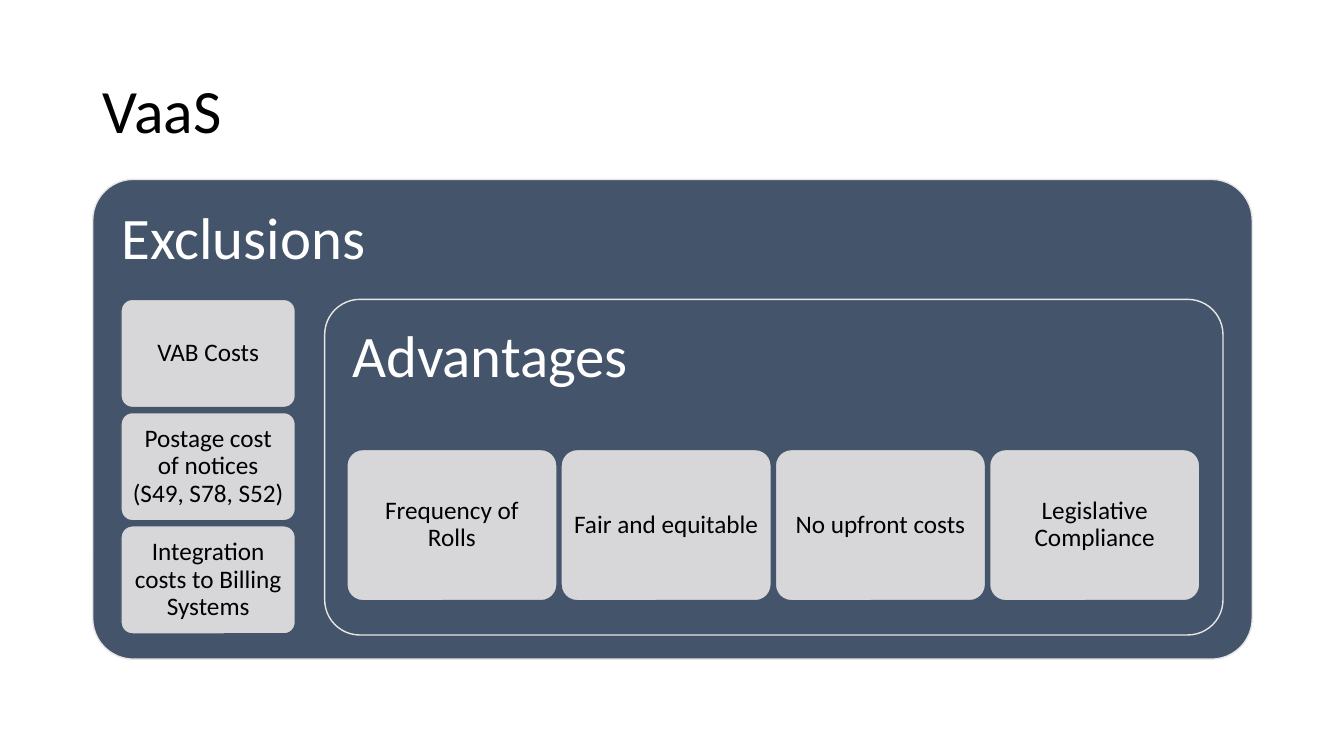
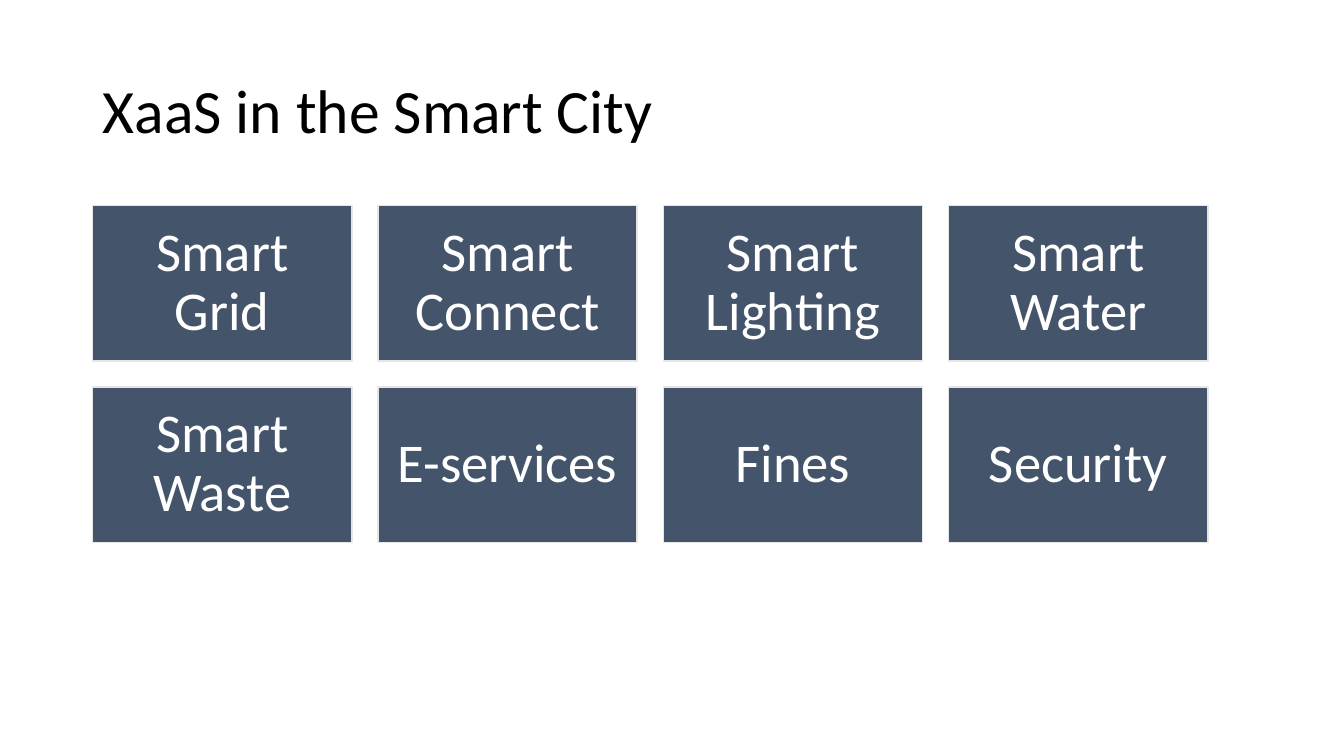
from lxml.etree import SubElement
from pptx import Presentation
from pptx.dml.color import RGBColor
from pptx.enum.shapes import MSO_SHAPE
from pptx.enum.text import MSO_ANCHOR, PP_ALIGN
from pptx.oxml.ns import qn
from pptx.util import Inches, Pt

FONT = "Calibri"
NAVY, PALE, WHITE, BLACK = "44546A", "E7E6E6", "FFFFFF", "000000"
LEFT, WIDTH = 0.92, 11.5


def rgb(value):
    return RGBColor.from_string(value)


def write(sp, text, size, color, margin, align, anchor):
    tf = sp.text_frame
    tf.word_wrap = True
    tf.vertical_anchor = anchor
    tf.margin_left = tf.margin_right = Inches(margin[0])
    tf.margin_top = tf.margin_bottom = Inches(margin[1])
    p = tf.paragraphs[0]
    p.text = text
    p.alignment = align
    p.line_spacing = 0.9
    p.font.name, p.font.size = FONT, Pt(size)
    p.font.color.rgb = rgb(color)


def add_title_slide(prs, title):
    slide = prs.slides.add_slide(prs.slide_layouts[6])
    sp = slide.shapes.add_textbox(*map(Inches, (LEFT, 0.4, WIDTH, 1.45)))
    write(sp, title, 44, BLACK, (0.1, 0.05), PP_ALIGN.LEFT, MSO_ANCHOR.MIDDLE)
    return slide


def add_box(slide, area, fill, line, corner=None, alpha=None):
    kind = MSO_SHAPE.RECTANGLE if corner is None else MSO_SHAPE.ROUNDED_RECTANGLE
    sp = slide.shapes.add_shape(kind, *map(Inches, area))
    sp.shadow.inherit = False
    if corner is not None:
        sp.adjustments[0] = corner
    sp.fill.solid()
    sp.fill.fore_color.rgb = rgb(fill)
    sp.line.color.rgb = rgb(line)
    sp.line.width = Pt(1)
    if alpha is not None:
        color = sp._element.spPr.find(qn("a:solidFill"))[0]
        SubElement(color, qn("a:alpha")).set("val", str(alpha * 1000))
    return sp


def add_panel(slide, area, heading, corner):
    sp = add_box(slide, area, NAVY, PALE, corner)
    write(sp, heading, 42, WHITE, (0.17, 0.17), PP_ALIGN.LEFT, MSO_ANCHOR.TOP)


def add_card(slide, area, text):
    sp = add_box(slide, area, PALE, NAVY, 0.105, 90)
    write(sp, text, 18, BLACK, (0.07, 0.07), PP_ALIGN.CENTER, MSO_ANCHOR.MIDDLE)


def add_tile(slide, area, text):
    sp = add_box(slide, area, NAVY, PALE)
    write(sp, text, 39, WHITE, (0.16, 0.16), PP_ALIGN.CENTER, MSO_ANCHOR.MIDDLE)


def add_grid(slide, add_item, area, columns, gap, texts):
    left, top, width, height = area
    rows = len(texts) // columns
    w = (width - gap * (columns - 1)) / columns
    h = (height - gap * (rows - 1)) / rows
    for i, text in enumerate(texts):
        row, col = divmod(i, columns)
        cell = (left + col * (w + gap), top + row * (h + gap), w, h)
        add_item(slide, cell, text)


def build_vaas(prs):
    slide = add_title_slide(prs, "VaaS")
    add_panel(slide, (LEFT, 1.78, WIDTH, 4.76), "Exclusions", 0.085)
    add_grid(slide, add_card, (1.2, 2.97, 1.73, 3.32), 1, 0.05, [
        "VAB Costs",
        "Postage cost of notices (S49, S78, S52)",
        "Integration costs to Billing Systems",
    ])
    add_panel(slide, (3.22, 2.97, 8.91, 3.33), "Advantages", 0.105)
    add_grid(slide, add_card, (3.44, 4.46, 8.46, 1.5), 4, 0.04, [
        "Frequency of Rolls", "Fair and equitable",
        "No upfront costs", "Legislative Compliance",
    ])


def build_smart_city(prs):
    slide = add_title_slide(prs, "XaaS in the Smart City")
    add_grid(slide, add_tile, (LEFT, 2.04, 11.06, 3.34), 4, 0.26, [
        "Smart Grid", "Smart Connect", "Smart Lighting", "Smart Water",
        "Smart Waste", "E-services", "Fines", "Security",
    ])


def main():
    prs = Presentation()
    prs.slide_width, prs.slide_height = Inches(13.33), Inches(7.5)
    build_vaas(prs)
    build_smart_city(prs)
    prs.save("out.pptx")


if __name__ == "__main__":
    main()
